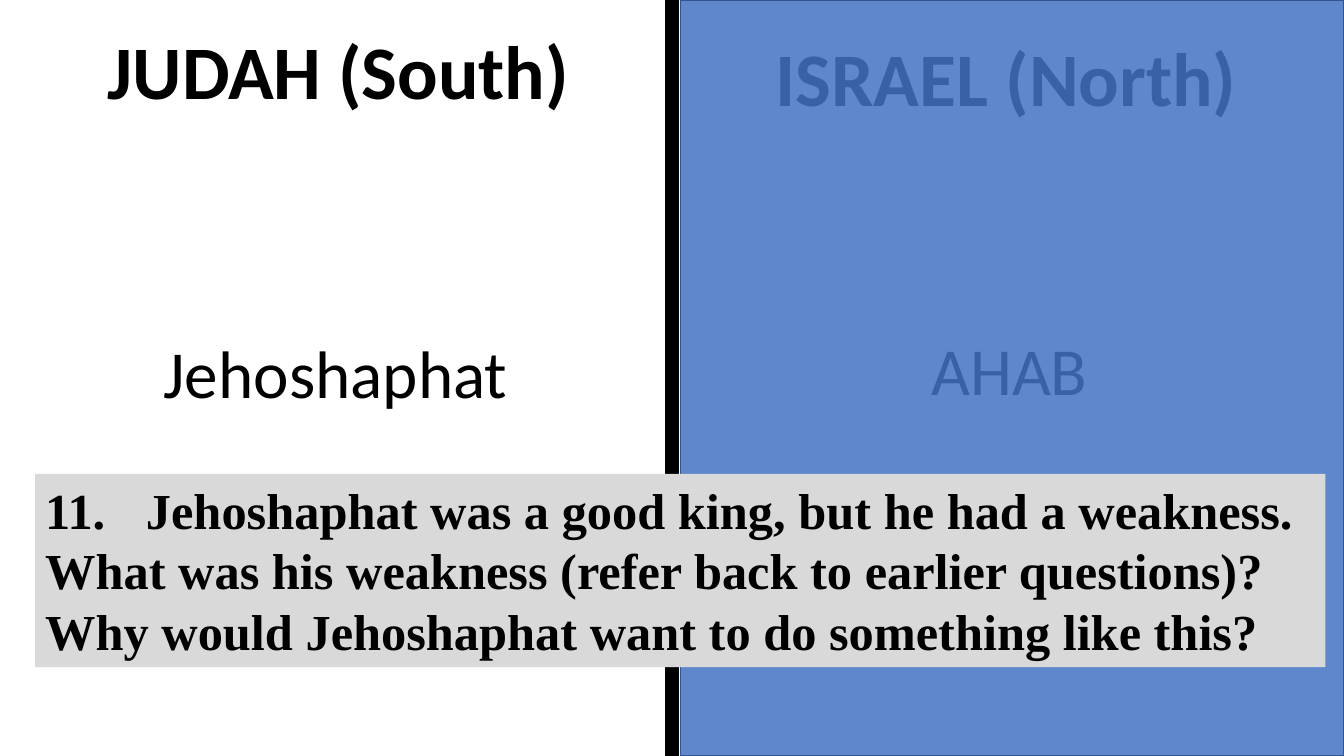
from lxml import etree
from pptx import Presentation
from pptx.dml.color import RGBColor
from pptx.enum import shapes, text
from pptx.oxml.ns import qn
from pptx.util import Pt

COLORS = {"ink": "000000", "veil": "4472C4", "veil_edge": "325491", "panel": "D9D9D9"}
WIDTH, HEIGHT = 960, 540
MIDDLE = WIDTH / 2


def color(name):
    return RGBColor.from_string(COLORS[name])


def set_font(p, name, size, bold):
    p.font.name, p.font.size, p.font.bold = name, Pt(size), bold
    p.font.color.rgb = color("ink")


def add_label(s, box, words, size, bold, anchor):
    tf = s.shapes.add_textbox(*map(Pt, box)).text_frame
    tf.word_wrap = True
    tf.vertical_anchor = anchor
    p = tf.paragraphs[0]
    p.text = words
    p.alignment = text.PP_ALIGN.CENTER
    p.line_spacing = 0.8
    p.space_before = Pt(10)
    set_font(p, "Calibri", size, bold)


def add_kingdom(s, box, title, king, king_offset):
    """Place a kingdom's title at the top of the box and its king below."""
    x, y, w, h = box
    add_label(s, (x, y, w, h), title, 54, True, text.MSO_ANCHOR.BOTTOM)
    dx, dy = king_offset
    add_label(s, (x + dx, y + dy, w, h), king, 48, False, text.MSO_ANCHOR.TOP)


def add_divider(s, x, height):
    line = s.shapes.add_connector(
        shapes.MSO_CONNECTOR.STRAIGHT, Pt(x), Pt(0), Pt(x), Pt(height))
    line.line.color.rgb = color("ink")
    line.line.width = Pt(10.5)
    etree.SubElement(line._element.spPr, qn("a:effectLst"))


def add_rect(s, box, fill):
    sp = s.shapes.add_shape(shapes.MSO_SHAPE.RECTANGLE, *map(Pt, box))
    sp.shadow.inherit = False
    sp.fill.solid()
    sp.fill.fore_color.rgb = color(fill)
    return sp


def add_veil(s, box):
    """Dim the kingdom in the box with a translucent rectangle."""
    sp = add_rect(s, box, "veil")
    sp.line.color.rgb = color("veil_edge")
    sp.line.width = Pt(1)
    fill = sp._element.spPr.find(qn("a:solidFill"))
    etree.SubElement(fill[0], qn("a:alpha"), val="85000")


def add_question(s, box, words):
    sp = add_rect(s, box, "panel")
    sp.line.fill.background()
    tf = sp.text_frame
    tf.word_wrap = True
    tf.vertical_anchor = text.MSO_ANCHOR.TOP
    p = tf.paragraphs[0]
    p.text = words
    p.alignment = text.PP_ALIGN.LEFT
    set_font(p, "Times New Roman", 36, True)


def main():
    prs = Presentation()
    prs.slide_width, prs.slide_height = Pt(WIDTH), Pt(HEIGHT)
    s = prs.slides.add_slide(prs.slide_layouts[6])
    add_kingdom(s, (38.9, 20.2, 406, 64.8), "JUDAH (South)", "Jehoshaphat", (-2.2, 223.9))
    add_kingdom(s, (514.8, 25.2, 408.2, 64.8), "ISRAEL (North)", "AHAB", (2.2, 216.7))
    add_divider(s, MIDDLE, HEIGHT)
    add_veil(s, (MIDDLE + 6, 0, MIDDLE - 6, HEIGHT))
    add_question(
        s, (25.2, 338.4, 921.6, 138.2),
        "11.\tJehoshaphat was a good king, but he had a weakness. "
        "What was his weakness (refer back to earlier questions)? "
        "Why would Jehoshaphat want to do something like this?")
    prs.save("out.pptx")


if __name__ == "__main__":
    main()
